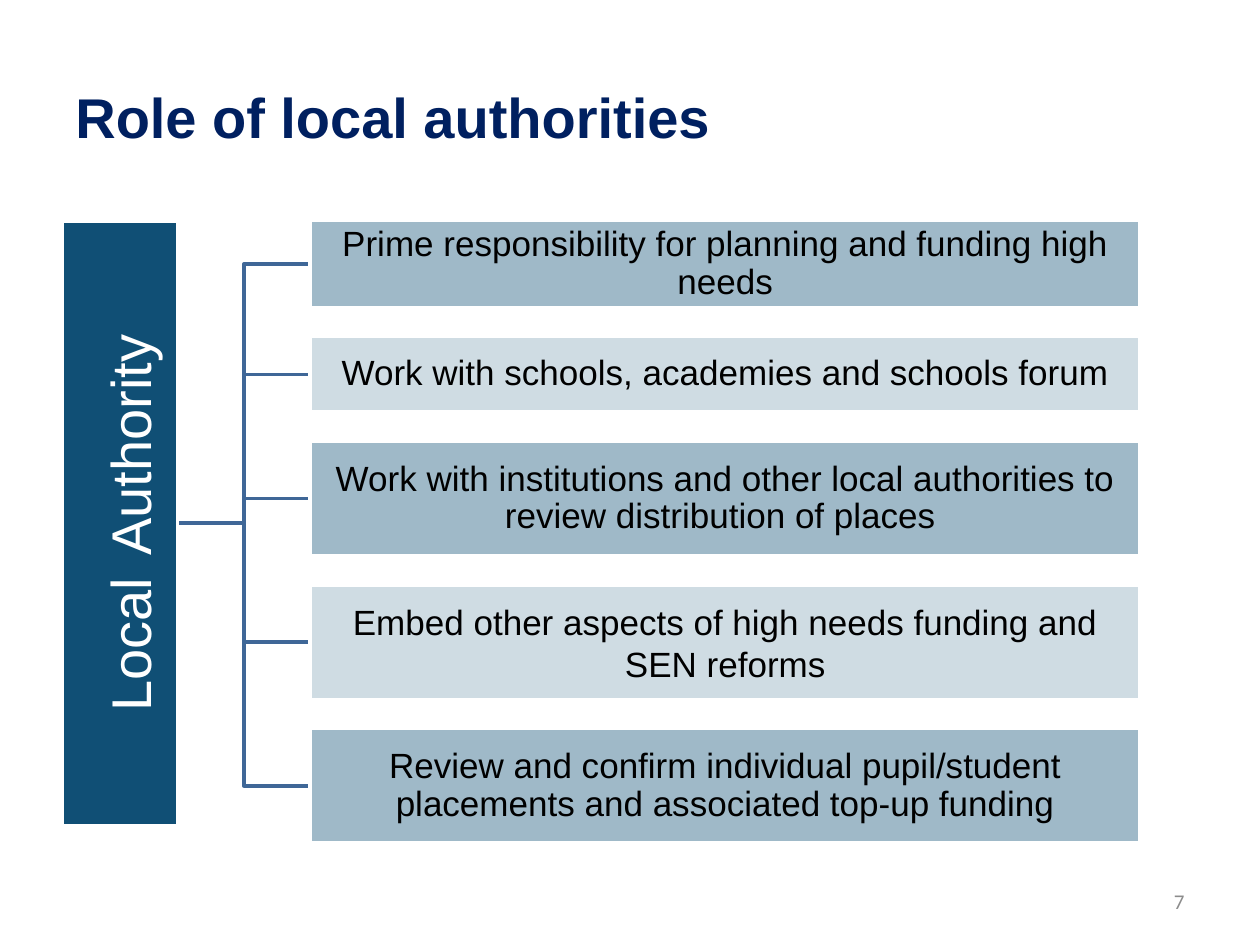
from pptx import Presentation
from pptx.dml.color import RGBColor
from pptx.enum.shapes import MSO_SHAPE as Shape
from pptx.enum.text import MSO_ANCHOR as Anchor, PP_ALIGN as Align
from pptx.util import Pt

COLORS = {"navy": "002060", "teal": "104F75", "mid": "9FB9C8", "pale": "CFDCE3",
          "line": "3F6797", "white": "FFFFFF", "black": "000000", "grey": "8C8C8C"}
TITLE = "Role of local authorities"
PAGE = "7"
ROOT = [("Local", 32, "Arial"), (" ", 56, "Calibri"), ("Authority", 32, "Arial")]
# text, height, line spacing
ROLES = [
    ("Prime responsibility for planning and funding high needs", 49.7, 0.9),
    ("Work with schools, academies and schools forum", 43.2, 0.9),
    ("Work with institutions and other local authorities to review distribution of places ",
     65.5, 0.9),
    ("Embed other aspects of high needs funding and SEN reforms", 65.5, 1.0),
    ("Review and confirm individual pupil/student placements and associated top-up funding",
     65.5, 0.9),
]
ROLE_LEFT, ROLE_TOP, ROLE_W, GAP = 177.3, 126, 474.3, 16.6
ROOT_X, ROOT_Y, ROOT_LEN, ROOT_THICK = 68.5, 299, 345.6, 65.8


def rgb(name):
    return RGBColor.from_string(COLORS[name])


def write(s, runs, color, align=Align.CENTER, inset=None, spacing=None, bold=None):
    tf = s.text_frame
    tf.word_wrap = True
    tf.vertical_anchor = Anchor.MIDDLE
    if inset is not None:
        tf.margin_left = tf.margin_right = tf.margin_top = tf.margin_bottom = Pt(inset)
    p = tf.paragraphs[0]
    p.alignment = align
    p.line_spacing = spacing
    for text, size, font in runs:
        r = p.add_run()
        r.text = text
        r.font.size, r.font.name, r.font.bold = Pt(size), font, bold
        r.font.color.rgb = rgb(color)


def add_text(x, y, w, h, *args, **kwargs):
    write(slide.shapes.add_textbox(Pt(x), Pt(y), Pt(w), Pt(h)), *args, **kwargs)


def add_box(x, y, w, h, fill):
    s = slide.shapes.add_shape(Shape.RECTANGLE, Pt(x), Pt(y), Pt(w), Pt(h))
    s.shadow.inherit = False
    s.fill.solid()
    s.fill.fore_color.rgb = rgb(fill)
    s.line.color.rgb = rgb("white")
    s.line.width = Pt(2)
    return s


def add_branch(y):
    """Draw an elbow from the root's right side to a role's left side."""
    start = ROOT_X + ROOT_THICK / 2
    mid = (start + ROLE_LEFT) / 2
    builder = slide.shapes.build_freeform(Pt(start), Pt(ROOT_Y))
    corners = [(mid, ROOT_Y), (mid, y), (ROLE_LEFT, y)]
    builder.add_line_segments([(Pt(a), Pt(b)) for a, b in corners], close=False)
    s = builder.convert_to_shape()
    s.shadow.inherit = False
    s.fill.background()
    s.line.color.rgb = rgb("line")
    s.line.width = Pt(2)


prs = Presentation()
prs.slide_width, prs.slide_height = Pt(720), Pt(540)
slide = prs.slides.add_slide(prs.slide_layouts[6])

add_text(36, 21.6, 648, 90, [(TITLE, 32, "Arial")], "navy", Align.LEFT, bold=True)

tops = [ROLE_TOP + sum(h + GAP for _, h, _ in ROLES[:i]) for i in range(len(ROLES))]
for top, (_, h, _) in reversed(list(zip(tops, ROLES))):
    add_branch(top + h / 2)

root = add_box(ROOT_X - ROOT_LEN / 2, ROOT_Y - ROOT_THICK / 2, ROOT_LEN, ROOT_THICK, "teal")
root.rotation = 270
write(root, ROOT, "white", inset=1.6, spacing=0.9)

for i, (top, (text, h, spacing)) in enumerate(zip(tops, ROLES)):
    s = add_box(ROLE_LEFT, top, ROLE_W, h, ("mid", "pale")[i % 2])
    write(s, [(text, 20, "Arial")], "black", inset=1, spacing=spacing)

add_text(516, 500.5, 168, 28.8, [(PAGE, 12, "Calibri")], "grey", Align.RIGHT)

prs.save("out.pptx")
